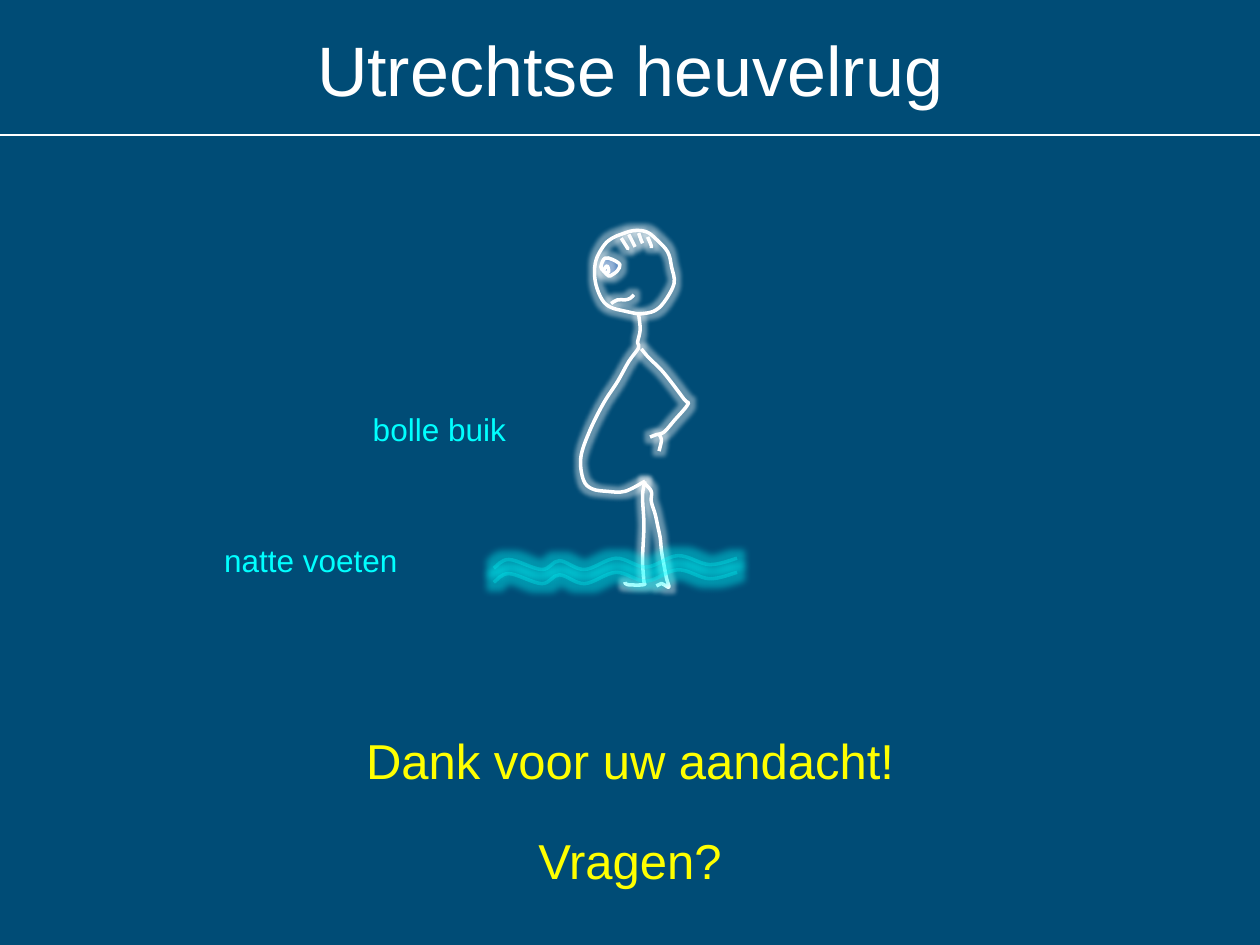
from dataclasses import dataclass
from typing import Optional

from lxml import etree
from pptx import Presentation
from pptx.dml.color import RGBColor
from pptx.enum.shapes import MSO_CONNECTOR
from pptx.enum.text import MSO_ANCHOR, PP_ALIGN
from pptx.oxml.ns import qn
from pptx.util import Pt

MIDDLE, TOP = MSO_ANCHOR.MIDDLE, MSO_ANCHOR.TOP
CENTER, LEFT = PP_ALIGN.CENTER, PP_ALIGN.LEFT
STRAIGHT = MSO_CONNECTOR.STRAIGHT

FONT = "Arial"
NAVY, WHITE, CYAN, YELLOW, BLUE = "004C76", "FFFFFF", "00FFFF", "FFFF00", "4F81BD"
WIDTH, HEIGHT = 720, 540
SCALE = 100  # drawing units per point


@dataclass
class Stroke:
    """A smooth pen stroke through the given points."""
    points: list
    closed: bool = False
    fill: Optional[str] = None
    color: str = WHITE
    opacity: int = 100
    glow: float = 5


@dataclass
class Label:
    text: str
    left: float
    top: float
    width: float
    height: float
    size: float
    color: str
    align: PP_ALIGN = LEFT
    anchor: MSO_ANCHOR = TOP
    spacing: float = 1.0


EYE = [(345.6, 147.6), (349.9, 148.3), (354.2, 151.2), (352.8, 154.8),
       (349.9, 157), (347.8, 157.7), (344.9, 154.8), (343.4, 152.6)]
PUPIL = [(344.9, 154.8), (347, 151.9), (347.8, 155.5)]
HEAD = [(345.6, 139.7), (349.9, 136.1), (355, 133.9), (362.2, 131.8), (369.4, 132.5),
        (375.1, 136.8), (381.6, 144), (383.8, 152.6), (385.2, 162), (379.4, 172.8),
        (373.7, 177.8), (366.5, 179.3), (364.3, 179.3), (357.1, 177.8), (349.2, 175.7),
        (344.2, 171.4), (340.6, 162.7), (339.8, 154.1), (341.3, 146.9)]
HAIRS = [[(355, 136.1), (358.6, 141.8), (358.6, 141.8)],
         [(359.3, 133.9), (362.2, 139.7), (362.9, 141.1)],
         [(365, 133.2), (366.5, 137.5), (367.2, 139)],
         [(370.1, 135.4), (372.2, 140.4), (372.2, 141.8)]]
MOUTH = [(349.2, 173.5), (352.8, 171.4), (357.1, 171.4), (360, 170.6), (362.2, 168.5)]
BODY = [(365, 180), (365.8, 188.6), (364.3, 195.8), (365, 198.7), (359.3, 206.6),
        (352.8, 218.2), (344.9, 230.4), (337, 246.2), (331.9, 261.4), (333.4, 274.3),
        (338.4, 279.4), (347, 280.8), (357.1, 280.8), (368.6, 275)]
ARM = [(366.5, 199.4), (370.8, 204.5), (379.4, 213.1), (391, 228.2), (393.1, 231.1),
       (385.2, 240.5), (379.4, 247), (375.1, 248.4), (371.5, 249.8)]
THUMB = [(376.6, 257.8), (378, 251.3), (376.6, 248.4)]
BACK_LEG = [(368.6, 275), (367.2, 283), (367.9, 296.6), (367.9, 303.8), (367.2, 319.7),
            (367.9, 331.9), (367.9, 334.1), (358.6, 334.1), (357.1, 332.6)]
FRONT_LEG = [(368.6, 276.5), (372.2, 280.8), (372.2, 286.6), (374.4, 293.8),
             (375.8, 300.2), (377.3, 307.4), (378, 314.6), (379.4, 322.6),
             (380.9, 330.5), (382.3, 335.5), (379.4, 334.1), (378, 333.4),
             (376.6, 334.1), (375.1, 334.8)]
WAVE = [(282.2, 324.7), (290.9, 319.7), (309.6, 325.4), (319.7, 320.4), (334.1, 325.4),
        (352.1, 319), (369.4, 324), (387.4, 317.5), (405.4, 322.6), (421.2, 319)]
WAVE_GAP = 8.1

FIGURE = [Stroke(BACK_LEG), Stroke(EYE, True, BLUE), Stroke(HEAD, True),
          *[Stroke(hair) for hair in HAIRS], Stroke(PUPIL, True, BLUE),
          *[Stroke(part) for part in (MOUTH, BODY, ARM, THUMB, FRONT_LEG)]]
WAVES = [Stroke([(x, y + dy) for x, y in WAVE], color=CYAN, opacity=27, glow=8)
         for dy in (0, WAVE_GAP)]
LABELS = [
    Label("bolle buik", 205.9, 230.7, 94.3, 38.9, 18, CYAN),
    Label("natte voeten", 121, 305.6, 130.3, 38.9, 18, CYAN),
    Label("Dank voor uw aandacht!\nVragen?", 0, 389.8, WIDTH, 122.4, 28, YELLOW,
          CENTER, MIDDLE, 1.7),
]


def rgb(color: str) -> RGBColor:
    return RGBColor.from_string(color)


def add_alpha(color_node, percent: int) -> None:
    etree.SubElement(color_node, qn("a:alpha")).set("val", str(percent * 1000))


def add_glow(sp, color: str, radius: float) -> None:
    effects = etree.SubElement(sp._element.spPr, qn("a:effectLst"))
    glow = etree.SubElement(effects, qn("a:glow"), rad=str(Pt(radius)))
    add_alpha(etree.SubElement(glow, qn("a:srgbClr"), val=color), 40)


def curve_lines(sp, closed: bool) -> None:
    """Turn the straight pieces of an outline into smooth cubic curves."""
    outline = sp._element.spPr.find(".//" + qn("a:path"))
    pts = [(int(pt.get("x")), int(pt.get("y"))) for pt in outline.iter(qn("a:pt"))]
    before, after = (pts[-2], pts[1]) if closed else (pts[0], pts[-1])
    ends = [before, *pts, after]
    for line, a, b, c, d in zip(outline.findall(qn("a:lnTo")),
                                ends, ends[1:], ends[2:], ends[3:]):
        curve = etree.Element(qn("a:cubicBezTo"))
        for base, start, end in ((b, a, c), (c, d, b), (c, c, c)):
            x, y = (round(m + (q - p) / 6) for m, p, q in zip(base, start, end))
            etree.SubElement(curve, qn("a:pt"), x=str(x), y=str(y))
        outline.replace(line, curve)


def draw_stroke(shapes, stroke: Stroke) -> None:
    pts = [(round(x * SCALE), round(y * SCALE)) for x, y in stroke.points]
    builder = shapes.build_freeform(*pts[0], scale=Pt(1) / SCALE)
    builder.add_line_segments(pts[1:] + pts[:1] * stroke.closed, close=stroke.closed)
    sp = builder.convert_to_shape()
    curve_lines(sp, stroke.closed)
    if stroke.fill:
        sp.fill.solid()
        sp.fill.fore_color.rgb = rgb(stroke.fill)
    else:
        sp.fill.background()
    sp.line.width = Pt(2)
    sp.line.color.rgb = rgb(stroke.color)
    if stroke.opacity < 100:
        add_alpha(sp.line._ln.find(".//" + qn("a:srgbClr")), stroke.opacity)
    add_glow(sp, stroke.color, stroke.glow)


def write_text(sp, label: Label) -> None:
    sp.left, sp.top = Pt(label.left), Pt(label.top)
    sp.width, sp.height = Pt(label.width), Pt(label.height)
    tf = sp.text_frame
    tf.text = label.text
    tf.word_wrap = True
    tf.vertical_anchor = label.anchor
    for p in tf.paragraphs:
        p.alignment = label.align
        p.line_spacing = label.spacing
        for r in p.runs:
            r.font.name, r.font.size = FONT, Pt(label.size)
            r.font.color.rgb = rgb(label.color)


def main() -> None:
    prs = Presentation()
    prs.slide_width, prs.slide_height = Pt(WIDTH), Pt(HEIGHT)
    s = prs.slides.add_slide(prs.slide_layouts[5])
    s.background.fill.solid()
    s.background.fill.fore_color.rgb = rgb(NAVY)

    # Title and rule below it
    write_text(s.shapes.title, Label("Utrechtse heuvelrug", 0, 5.8, WIDTH, 66.2, 40,
                                     WHITE, CENTER, MIDDLE))
    rule = s.shapes.add_connector(STRAIGHT, Pt(0), Pt(77.2), Pt(WIDTH), Pt(77.2))
    rule.line.width = Pt(1.5)
    rule.line.color.rgb = rgb(WHITE)
    etree.SubElement(rule._element.spPr, qn("a:effectLst"))

    # Stick figure standing in water
    figure = s.shapes.add_group_shape()
    for stroke in FIGURE:
        draw_stroke(figure.shapes, stroke)
    for stroke in WAVES:
        draw_stroke(s.shapes, stroke)

    # Captions and closing words
    for label in LABELS:
        write_text(s.shapes.add_textbox(0, 0, 0, 0), label)

    prs.save("out.pptx")


if __name__ == "__main__":
    main()
